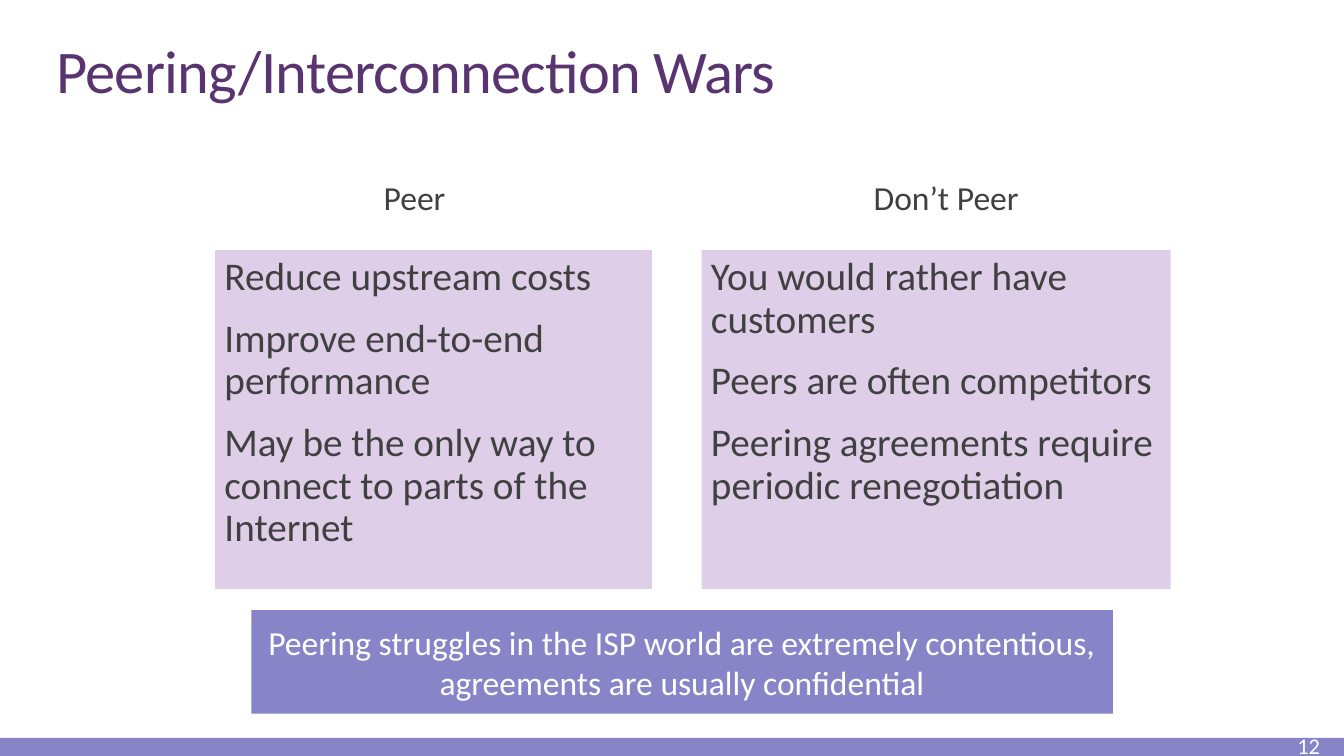
"""Build the slide on the arguments for and against peering."""

from pptx import Presentation
from pptx.dml.color import RGBColor
from pptx.enum.shapes import MSO_SHAPE
from pptx.enum.text import MSO_ANCHOR, PP_ALIGN
from pptx.util import Inches, Pt

PURPLE = RGBColor(0x5A, 0x34, 0x71)
PERIWINKLE = RGBColor(0x87, 0x84, 0xC7)
LILAC = RGBColor(0xDE, 0xCE, 0xE8)
CHARCOAL = RGBColor(0x40, 0x40, 0x40)
WHITE = RGBColor(0xFF, 0xFF, 0xFF)

deck = Presentation()
deck.slide_width = Inches(10)
deck.slide_height = deck.slide_width * 9 // 16
page = deck.slides.add_slide(deck.slide_layouts[6])


def add_box(left, top, width, height, fill=None):
    """Place a box by percentages of the slide's width and height."""
    area = [int(share * side / 100) for share, side in (
        (left, deck.slide_width), (top, deck.slide_height),
        (width, deck.slide_width), (height, deck.slide_height))]
    if fill is None:
        box = page.shapes.add_textbox(*area)
    else:
        box = page.shapes.add_shape(MSO_SHAPE.RECTANGLE, *area)
        box.shadow.inherit = False
        box.fill.solid()
        box.fill.fore_color.rgb = fill
        box.line.fill.background()
    box.text_frame.word_wrap = True
    return box


def write(box, lines, size, color, align=PP_ALIGN.LEFT,
          anchor=MSO_ANCHOR.MIDDLE, spacing=1.0):
    """Fill a box with evenly formatted paragraphs."""
    frame = box.text_frame
    frame.text = "\n".join(lines)
    frame.vertical_anchor = anchor
    for index, para in enumerate(frame.paragraphs):
        para.alignment = align
        para.line_spacing = spacing
        para.space_before = Pt(9 if index else 0)
        para.space_after = Pt(1.5 if len(lines) > 1 else 0)
        for span in para.runs:
            span.font.name = "Calibri"
            span.font.size = Pt(size)
            span.font.color.rgb = color


add_box(0, 97.6, 100, 2.4, PERIWINKLE)

title = add_box(3.2, 4.27, 94.8, 10.67)
write(title, ["Peering/Interconnection Wars"], 32.4, PURPLE,
      anchor=MSO_ANCHOR.BOTTOM, spacing=0.85)
title.text_frame.paragraphs[0].runs[0].font._element.set("spc", "-40")

columns = [
    ("Peer", 12.5, 36, 16, 32.5, [
        "Reduce upstream costs",
        "Improve end-to-end performance",
        "May be the only way to connect to parts of the Internet"]),
    ("Don’t Peer", 52.6, 34.9, 52.2, 34.9, [
        "You would rather have customers",
        "Peers are often competitors",
        "Peering agreements require periodic renegotiation"]),
]
for heading, heading_left, heading_width, left, width, reasons in columns:
    heading_box = add_box(heading_left, 23.1, heading_width, 9.25)
    reasons_box = add_box(left, 33.1, width, 44.8, LILAC)
    for box in (heading_box, reasons_box):
        box.text_frame.margin_left = Inches(0.07)
        box.text_frame.margin_right = 0
    write(heading_box, [heading], 18, CHARCOAL, PP_ALIGN.CENTER,
          MSO_ANCHOR.TOP, 0.9)
    write(reasons_box, reasons, 21, CHARCOAL,
          anchor=MSO_ANCHOR.TOP, spacing=0.9)

conclusion = add_box(18.7, 80.7, 64.1, 13.7, PERIWINKLE)
write(conclusion, ["Peering struggles in the ISP world are extremely contentious, "
                   "agreements are usually confidential"],
      18, WHITE, PP_ALIGN.CENTER)

page_number = add_box(88.4, 97.1, 10.8, 3)
write(page_number, ["12"], 12, WHITE, PP_ALIGN.RIGHT)

deck.save("out.pptx")
